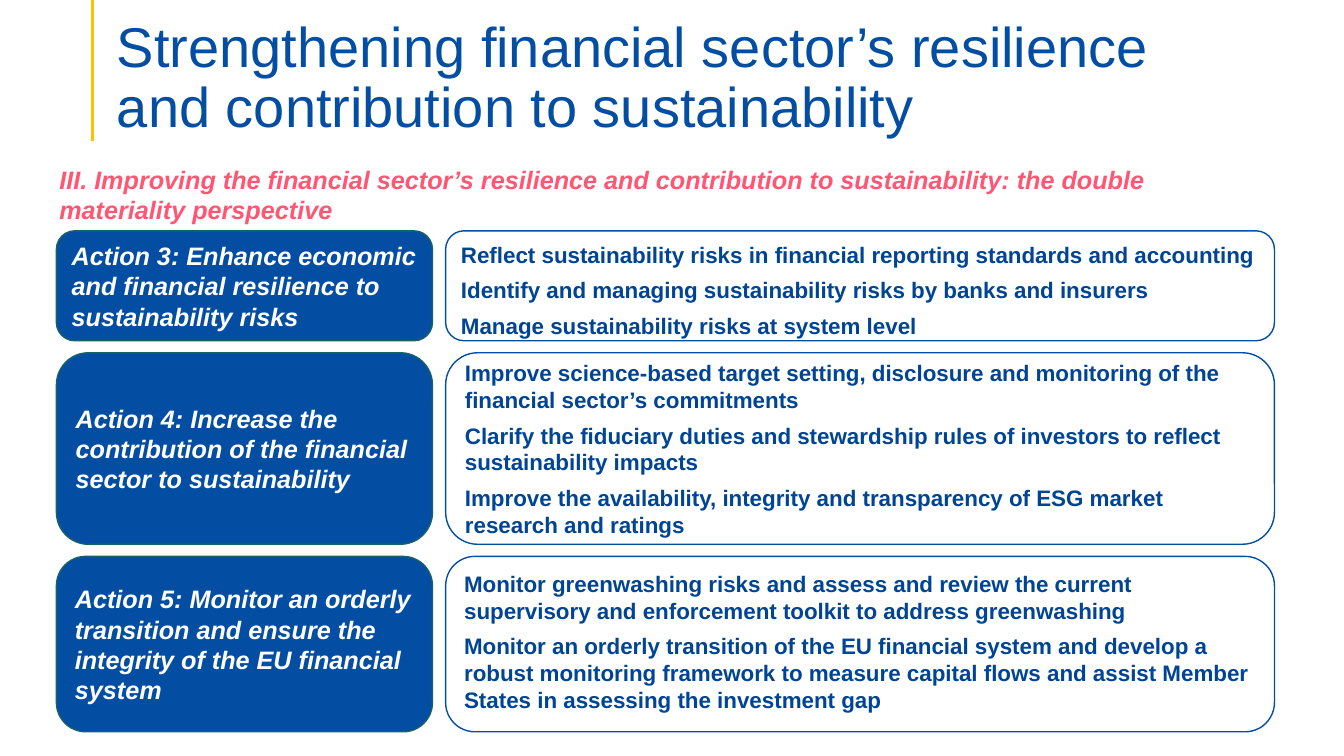
"""Builds a slide of three finance actions, each beside its measures."""
import lxml.etree
import pptx
import pptx.dml.color
import pptx.enum.shapes
import pptx.enum.text
import pptx.oxml.ns
import pptx.util

PX = 9144
FONT = "Arial"
COLORS = {
    "blue": "034EA2",
    "navy": "004494",
    "teal": "166267",
    "gold": "FFC000",
    "pink": "FF5773",
    "white": "FFFFFF",
}
ANCHOR = pptx.enum.text.MSO_ANCHOR
ALIGN = pptx.enum.text.PP_ALIGN
SHAPE = pptx.enum.shapes.MSO_SHAPE

TITLE = "Strengthening financial sector’s resilience and contribution to sustainability"
THEME = (
    "III. Improving the financial sector’s resilience and contribution to "
    "sustainability: the double materiality perspective"
)
ROWS = [
    (
        109,
        ANCHOR.TOP,
        "Action 3: Enhance economic and financial resilience to sustainability risks",
        [
            "Reflect sustainability risks in financial reporting standards and accounting",
            "Identify and managing sustainability risks by banks and insurers",
            "Manage sustainability risks at system level",
        ],
    ),
    (
        190,
        ANCHOR.MIDDLE,
        "Action 4: Increase the contribution of the financial sector to sustainability",
        [
            "Improve science-based target setting, disclosure and monitoring of the "
            "financial sector’s commitments",
            "Clarify the fiduciary duties and stewardship rules of investors to reflect "
            "sustainability impacts",
            "Improve the availability, integrity and transparency of ESG market "
            "research and ratings",
        ],
    ),
    (
        174,
        ANCHOR.TOP,
        "Action 5: Monitor an orderly transition and ensure the integrity of the EU "
        "financial system",
        [
            "Monitor greenwashing risks and assess and review the current supervisory "
            "and enforcement toolkit to address greenwashing",
            "Monitor an orderly transition of the EU financial system and develop a "
            "robust monitoring framework to measure capital flows and assist Member "
            "States in assessing the investment gap",
        ],
    ),
]


def px(*nums):
    return [pptx.util.Emu(num * PX) for num in nums]


def color(name):
    return pptx.dml.color.RGBColor.from_string(COLORS[name])


def write(frame, texts, size, tint, anchor, bold=True, italic=False, after=0):
    frame.word_wrap = True
    frame.vertical_anchor = anchor
    for num, text in enumerate(texts):
        para = frame.add_paragraph() if num else frame.paragraphs[0]
        para.alignment = ALIGN.LEFT
        para.space_after = pptx.util.Pt(after)
        run = para.add_run()
        run.text = text
        run.font.name = FONT
        run.font.size = pptx.util.Pt(size)
        run.font.bold = bold
        run.font.italic = italic
        run.font.color.rgb = color(tint)


def add_title(slide):
    title = slide.shapes.title
    title.left, title.top, title.width, title.height = px(106, 53, 1150, 86)
    frame = title.text_frame
    frame.auto_size = pptx.enum.text.MSO_AUTO_SIZE.NONE
    frame.margin_bottom = 0
    write(frame, [TITLE], 40, "blue", ANCHOR.BOTTOM, bold=False)
    frame.paragraphs[0].line_spacing = 0.9


def add_rule(slide):
    kind = pptx.enum.shapes.MSO_CONNECTOR.STRAIGHT
    rule = slide.shapes.add_connector(kind, *px(92, 0, 92, 140))
    rule.line.color.rgb = color("gold")
    rule.line.width = pptx.util.Pt(2.25)
    props = rule.element.find(pptx.oxml.ns.qn("p:spPr"))
    lxml.etree.SubElement(props, pptx.oxml.ns.qn("a:effectLst"))


def add_theme(slide):
    box = slide.shapes.add_textbox(*px(49, 158, 1216, 71))
    write(box.text_frame, [THEME], 18, "pink", ANCHOR.TOP, italic=True)


def add_card(slide, left, top, width, height, fill, edge):
    card = slide.shapes.add_shape(
        SHAPE.ROUNDED_RECTANGLE, *px(left, top, width, height)
    )
    card.shadow.inherit = False
    card.fill.solid()
    card.fill.fore_color.rgb = color(fill)
    card.line.color.rgb = color(edge)
    card.line.width = pptx.util.Pt(1)
    return card.text_frame


def add_row(slide, top, height, anchor, action, steps):
    frame = add_card(slide, 56, top, 373, height, "blue", "teal")
    write(frame, [action], 18, "white", ANCHOR.MIDDLE, italic=True)
    frame = add_card(slide, 442, top, 822, height, "white", "blue")
    write(frame, steps, 16, "navy", anchor, after=6)


def main():
    deck = pptx.Presentation()
    deck.slide_width, deck.slide_height = px(1333, 750)
    slide = deck.slides.add_slide(deck.slide_layouts[5])
    add_rule(slide)
    add_title(slide)
    top, gap = 229, 12
    for height, anchor, action, steps in ROWS:
        add_row(slide, top, height, anchor, action, steps)
        top += height + gap
    add_theme(slide)
    deck.save("out.pptx")


if __name__ == "__main__":
    main()
